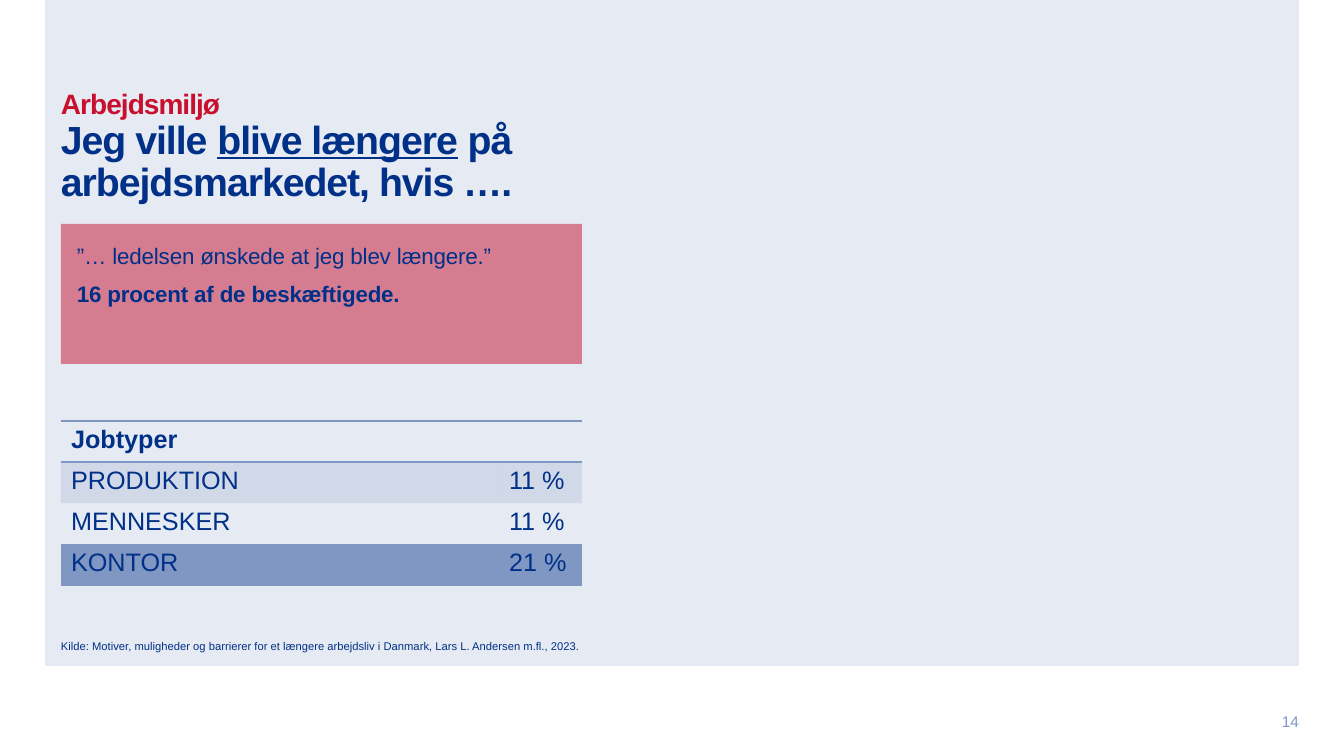
from lxml import etree
from pptx import Presentation
from pptx import util as u
from pptx.dml.color import RGBColor
from pptx.enum import shapes, text
from pptx.oxml import ns

PX = 914400 / 100.8
NAVY, RED, STEEL, PALE = "003087", "C8102E", "8097C3", "E6EAF3"
PLAIN = "{2D5ABB26-0587-4C30-8999-92F81FD0307C}"


def px(n):
    """Turn pixels into EMU."""
    return u.Emu(round(n * PX))


def paint(fill, color, alpha=None):
    """Give a solid fill, with opacity in percent if wanted."""
    fill.solid()
    fill.fore_color.rgb = RGBColor.from_string(color)
    if alpha:
        node = fill._xPr.find(".//" + ns.qn("a:srgbClr"))
        etree.SubElement(node, ns.qn("a:alpha"), val=str(alpha * 1000))


def write(frame, paras, size=18, color=NAVY, track=0, lead=None, after=0,
          pad=0, align="LEFT", anchor="TOP"):
    """Fill a text frame with paragraphs of (words, format) runs."""
    frame.word_wrap = True
    frame.vertical_anchor = getattr(text.MSO_ANCHOR, anchor)
    if pad is not None:
        frame.margin_left = frame.margin_right = px(pad)
        frame.margin_top = frame.margin_bottom = px(pad)
    for i, runs in enumerate(paras):
        para = frame.add_paragraph() if i else frame.paragraphs[0]
        para.alignment = getattr(text.PP_ALIGN, align)
        para.line_spacing = lead
        para.space_after = u.Pt(after)
        for words, look in runs:
            for j, part in enumerate(words.split("\n")):
                if j:
                    para.add_line_break()
                if not part:
                    continue
                run = para.add_run()
                run.text = part
                font = run.font
                font.name = "Arial"
                font.size = u.Pt(look.get("size", size))
                font.bold = look.get("bold", False)
                font.underline = look.get("line", False)
                font.color.rgb = RGBColor.from_string(look.get("color", color))
                if track:
                    run._r.get_or_add_rPr().set("spc", str(track))


def block(slide, box, color, alpha=None):
    """Draw a plain filled rectangle."""
    rect = slide.shapes.add_shape(shapes.MSO_SHAPE.RECTANGLE, *map(px, box))
    rect.shadow.inherit = False
    rect.line.fill.background()
    paint(rect.fill, color, alpha)
    return rect


def label(slide, box, paras, **look):
    """Place a text box."""
    area = slide.shapes.add_textbox(*map(px, box))
    write(area.text_frame, paras, **look)


def head(slide, box):
    """Place the topic and the title."""
    bold = {"size": 28, "bold": True}
    label(slide, box, [[
        ("Arbejdsmiljø\n", {"size": 20, "bold": True, "color": RED}),
        ("Jeg ville ", bold),
        ("blive længere", {**bold, "line": True}),
        (" på \narbejdsmarkedet, hvis ….", bold),
    ]], track=-70, lead=0.9)


def quote(slide, box):
    """Place the quote panel."""
    panel = block(slide, box, RED, 50)
    write(panel.text_frame, [
        [("”… ledelsen ønskede at jeg blev længere.”", {})],
        [("16 procent af de beskæftigede.", {"bold": True})],
    ], size=16, track=-10, lead=1.1, after=6, pad=16)


def edge(cell, side):
    """Draw one border of a cell."""
    line = etree.SubElement(cell._tc.get_or_add_tcPr(), ns.qn("a:ln" + side),
                            w=str(u.Pt(1)))
    fill = etree.SubElement(line, ns.qn("a:solidFill"))
    etree.SubElement(fill, ns.qn("a:srgbClr"), val=STEEL)


def jobs(slide, box):
    """Place the table of job types."""
    rows = [("Jobtyper", ""), ("PRODUKTION", "11 %"),
            ("MENNESKER", "11 %"), ("KONTOR", "21 %")]
    left, top, width, high = box
    grid = slide.shapes.add_table(len(rows), 2, *map(px, box)).table
    grid.first_row = grid.horz_banding = False
    grid._tbl.tblPr.find(ns.qn("a:tableStyleId")).text = PLAIN
    last = 83
    grid.columns[0].width, grid.columns[1].width = px(width - last), px(last)
    for r, row in enumerate(rows):
        grid.rows[r].height = px(high / len(rows))
        for c, words in enumerate(row):
            cell = grid.cell(r, c)
            write(cell.text_frame, [[(words, {"bold": r == 0})]], pad=None)
            if r == 0:
                edge(cell, "T")
            if r in (0, len(rows) - 1):
                edge(cell, "B")
            if r % 2:
                paint(cell.fill, STEEL, 20)
            else:
                cell.fill.background()


def foot(slide, box):
    """Place the source line."""
    label(slide, box, [[(
        "Kilde: Motiver, muligheder og barrierer for et længere arbejdsliv "
        "i Danmark, Lars L. Andersen m.fl., 2023.", {})]],
        size=8, lead=1.04, after=3)


def main():
    """Build and save the slide."""
    deck = Presentation()
    deck.slide_width, deck.slide_height = px(1344), px(756)
    slide = deck.slides.add_slide(deck.slide_layouts[6])
    left, wide = 61, 521
    block(slide, (45, 0, 1254, 666), PALE)
    label(slide, (1254, 714, 45, 14), [[("14", {})]], size=11, color=STEEL,
          align="RIGHT", anchor="MIDDLE")
    head(slide, (left, 90, wide, 116))
    quote(slide, (left, 224, wide, 140))
    jobs(slide, (left, 421, wide, 164))
    foot(slide, (left, 639, 579, 21))
    deck.save("out.pptx")


if __name__ == "__main__":
    main()
